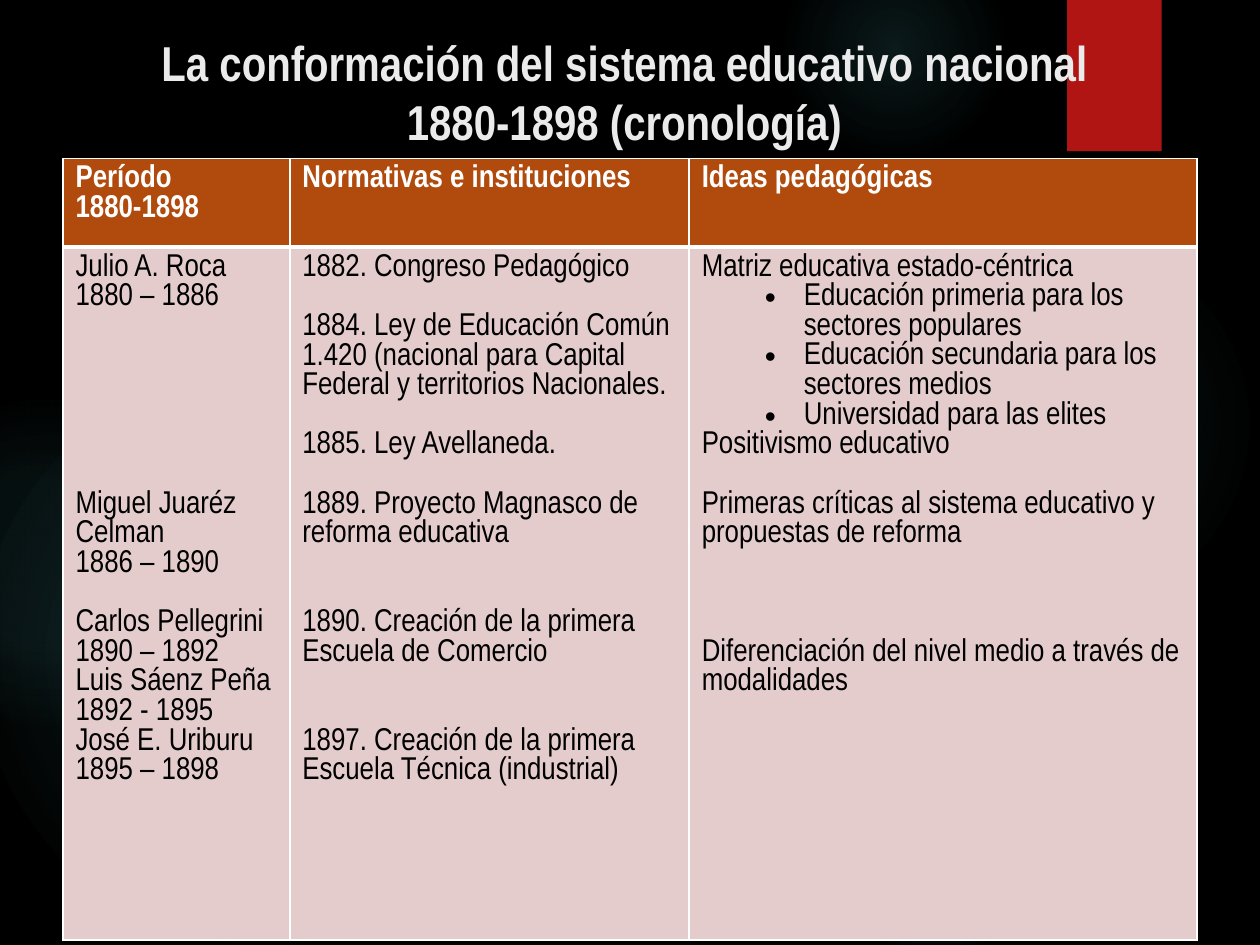
from lxml import etree
from pptx import Presentation
from pptx.dml.color import RGBColor
from pptx.enum.shapes import MSO_SHAPE
from pptx.enum.text import MSO_ANCHOR, PP_ALIGN
from pptx.oxml import parse_xml
from pptx.oxml.ns import qn
from pptx.util import Inches, Pt

OVAL, RECTANGLE = MSO_SHAPE.OVAL, MSO_SHAPE.RECTANGLE
TOP, CENTER = MSO_ANCHOR.TOP, PP_ALIGN.CENTER
BLACK = RGBColor(0x00, 0x00, 0x00)
WHITE = RGBColor(0xFF, 0xFF, 0xFF)
TITLE_GRAY = RGBColor(0xEB, 0xEB, 0xEB)
GLOW = RGBColor(0x50, 0xB9, 0xC1)
RED = RGBColor(0xB0, 0x15, 0x13)
ORANGE = RGBColor(0xB0, 0x4A, 0x0D)
PINK = RGBColor(0xE4, 0xCC, 0xCC)
FONT = "Arial Narrow"
DRAWING = "http://schemas.openxmlformats.org/drawingml/2006/main"
LINE = 16.94  # height of one table text line, in points


def set_glow(shape, stops):
    """Fill a shape with a radial gradient of (position %, opacity %) stops."""
    marks = "".join(
        f'<a:gs pos="{position * 1000}"><a:srgbClr val="{GLOW}">'
        f'<a:alpha val="{opacity * 1000}"/></a:srgbClr></a:gs>'
        for position, opacity in stops)
    gradient = parse_xml(
        f'<a:gradFill xmlns:a="{DRAWING}" rotWithShape="1"><a:gsLst>{marks}</a:gsLst>'
        '<a:path path="circle"><a:fillToRect l="50000" t="50000" r="50000" b="50000"/>'
        '</a:path></a:gradFill>')
    shape.fill.background()
    properties = shape.element.spPr
    properties.replace(properties.find(qn("a:noFill")), gradient)


def set_borders(cell, bottom_width):
    """Give a cell white borders; they must precede the cell's fill."""
    properties = cell._tc.get_or_add_tcPr()
    widths = {"lnL": 1, "lnR": 1, "lnT": 1, "lnB": bottom_width}
    for index, (side, width) in enumerate(widths.items()):
        border = etree.fromstring(
            f'<a:{side} xmlns:a="{DRAWING}" w="{Pt(width)}"><a:solidFill>'
            f'<a:srgbClr val="{WHITE}"/></a:solidFill></a:{side}>')
        properties.insert(index, border)


deck = Presentation()
deck.slide_width, deck.slide_height = Inches(10), Inches(7.5)
page = deck.slides.add_slide(deck.slide_layouts[6])
page.background.fill.solid()
page.background.fill.fore_color.rgb = BLACK

# Background glows: left, top, diameter, gradient stops
glows = [
    (6.89, 1.83, 3.08, [(0, 7), (36, 6), (69, 0)]),
    (6.22, -0.5, 1.75, [(0, 14), (36, 7), (73, 0)]),
    (6.89, 6.67, 1.08, [(0, 9), (36, 5), (66, 0)]),
    (-0.17, 2.92, 4.58, [(0, 11), (36, 10), (75, 0)]),
    (-0.92, 3.17, 2.58, [(0, 8), (36, 8), (72, 0)]),
]
for left, top, diameter, stops in glows:
    glow = page.shapes.add_shape(
        OVAL, Inches(left), Inches(top), Inches(diameter), Inches(diameter))
    glow.shadow.inherit = False
    glow.line.fill.background()
    set_glow(glow, stops)

# Red ribbon
ribbon = page.shapes.add_shape(RECTANGLE, Inches(8.47), 0, Inches(0.75), Inches(1.2))
ribbon.shadow.inherit = False
ribbon.fill.solid()
ribbon.fill.fore_color.rgb = RED
ribbon.line.fill.background()

# Chronology: each paragraph is (empty lines above, text, bulleted)
headers = [
    [(0, "Período", False), (0, "1880-1898", False)],
    [(0, "Normativas e instituciones", False)],
    [(0, "Ideas pedagógicas", False)],
]
periods = [
    (0, "Julio A. Roca", False),
    (0, "1880 – 1886", False),
    (6, "Miguel Juaréz Celman", False),
    (0, "1886 – 1890", False),
    (1, "Carlos Pellegrini", False),
    (0, "1890 – 1892", False),
    (0, "Luis Sáenz Peña", False),
    (0, "1892 - 1895", False),
    (0, "José E. Uriburu", False),
    (0, "1895 – 1898", False),
]
laws = [
    (0, "1882. Congreso Pedagógico", False),
    (1, "1884. Ley de Educación Común 1.420 (nacional para Capital Federal "
        "y territorios Nacionales.", False),
    (1, "1885. Ley Avellaneda.", False),
    (1, "1889. Proyecto Magnasco de reforma educativa", False),
    (2, "1890. Creación de la primera Escuela de Comercio", False),
    (2, "1897. Creación de la primera Escuela Técnica (industrial)", False),
]
ideas = [
    (0, "Matriz educativa estado-céntrica", False),
    (0, "Educación primeria para los sectores populares", True),
    (0, "Educación secundaria para los sectores medios", True),
    (0, "Universidad para las elites", True),
    (0, "Positivismo educativo", False),
    (1, "Primeras críticas al sistema educativo y propuestas de reforma", False),
    (3, "Diferenciación del nivel medio a través de modalidades", False),
]
rows = [
    (0.7, headers, ORANGE, WHITE, True, 3),
    (5.5, [periods, laws, ideas], PINK, BLACK, False, 1),
]
table = page.shapes.add_table(
    2, 3, Inches(0.5), Inches(1.26), Inches(9), Inches(6.2)).table
for column, width in zip(table.columns, (1.8, 3.17, 4.03)):
    column.width = Inches(width)

for row_index, (height, cells, fill, color, bold, bottom_width) in enumerate(rows):
    table.rows[row_index].height = Inches(height)
    for column_index, entries in enumerate(cells):
        cell = table.cell(row_index, column_index)
        cell.fill.solid()
        cell.fill.fore_color.rgb = fill
        set_borders(cell, bottom_width)
        for index, (gap, text, bulleted) in enumerate(entries):
            frame = cell.text_frame
            para = frame.paragraphs[0] if index == 0 else frame.add_paragraph()
            para.text = text
            if bulleted:
                para.level = 1
                properties = para._p.get_or_add_pPr()
                properties.set("marL", str(Inches(0.81)))
                properties.set("indent", str(Inches(-0.31)))
                etree.SubElement(properties, qn("a:buFont"), typeface="Arial")
                etree.SubElement(properties, qn("a:buChar"), char="•")
            if gap:
                para.space_before = Pt(gap * LINE)
            para.font.name, para.font.size = FONT, Pt(18)
            para.font.bold = bold
            para.font.color.rgb = color

# Title
box = page.shapes.add_textbox(Inches(0.5), Inches(0.21), Inches(9), Inches(0.94))
frame = box.text_frame
frame.word_wrap = True
frame.vertical_anchor = TOP
frame.margin_right = Inches(0.19)
para = frame.paragraphs[0]
para.text = "La conformación del sistema educativo nacional\v1880-1898 (cronología)"
para.alignment = CENTER
para.font.name, para.font.size = FONT, Pt(28)
para.font.bold = True
para.font.color.rgb = TITLE_GRAY

deck.save("out.pptx")
